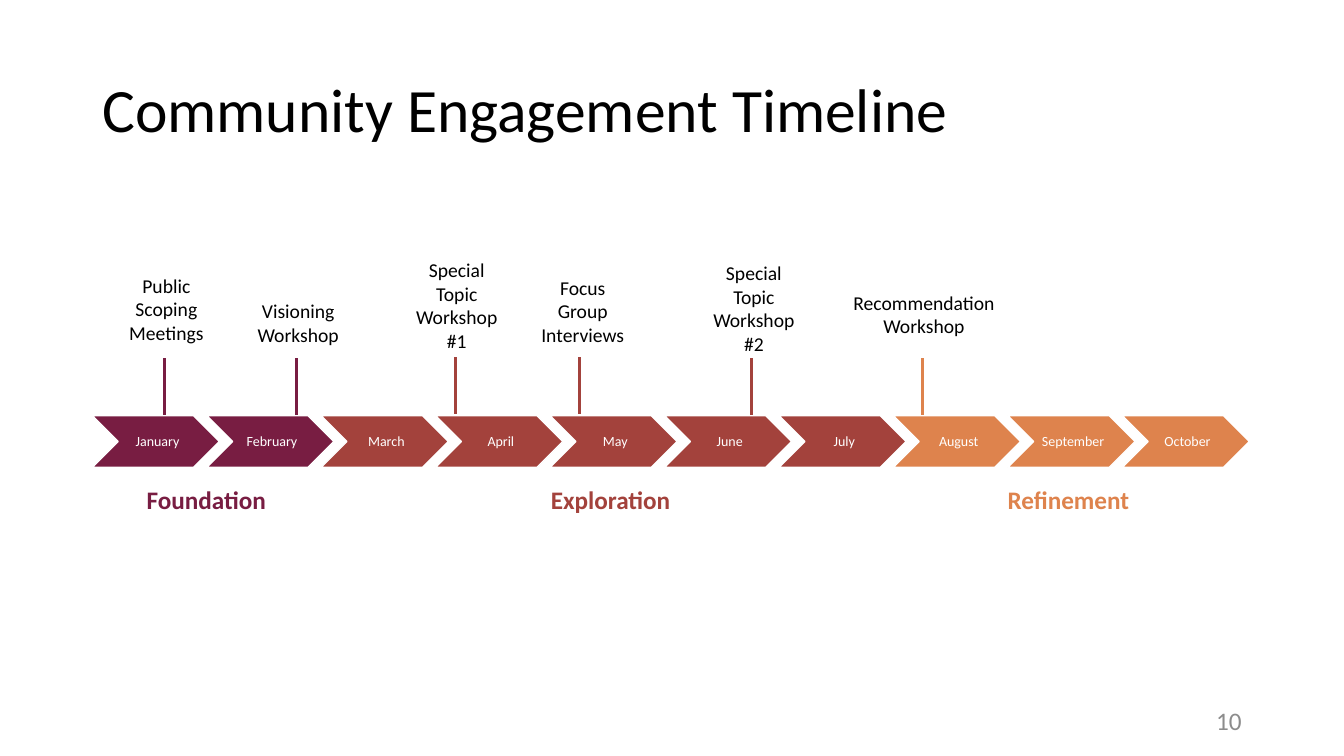
from lxml.etree import SubElement
from pptx import Presentation
from pptx.dml.color import RGBColor
from pptx.enum.shapes import MSO_CONNECTOR, MSO_SHAPE
from pptx.enum.text import MSO_ANCHOR, MSO_AUTO_SIZE, PP_ALIGN
from pptx.oxml.ns import qn
from pptx.util import Pt

PX = 9525
FONT = "Calibri"
BLACK, WHITE, GREY = "000000", "FFFFFF", "8C8C8C"
PLUM, BRICK, ORANGE = "781D42", "A3423C", "DE834D"

# name, colour, months, left edge of the name
PHASES = [
    ("Foundation", PLUM, ["January", "February"], 95),
    ("Exploration", BRICK, ["March", "April", "May", "June", "July"], 480),
    ("Refinement", ORANGE, ["August", "September", "October"], 916),
]
# wording, colour, stem x, stem top, label box
EVENTS = [
    ("Public Scoping Meetings", PLUM, 157, 341, (108, 256, 101, 78)),
    ("Visioning Workshop", PLUM, 282, 341, (231, 280, 106, 55)),
    ("Special Topic Workshop #1", BRICK, 434, 340, (382, 241, 106, 100)),
    ("Focus Group Interviews", BRICK, 552, 340, (502, 258, 106, 78)),
    ("Special Topic Workshop #2", BRICK, 716, 341, (665, 244, 106, 100)),
    ("Recommendation Workshop", ORANGE, 879, 341, (796, 272, 168, 55)),
]
STEM_HEIGHT = 54
MONTH_LEFT, MONTH_TOP, MONTH_PITCH = 88, 396, 109
MONTH_WIDTH, MONTH_HEIGHT = 121, 49
PHASE_TOP, PHASE_WIDTH, PHASE_HEIGHT = 457, 203, 38


def px(*lengths):
    return [length * PX for length in lengths]


def colour(code):
    return RGBColor.from_string(code)


def set_all(target, values):
    for name, value in values.items():
        setattr(target, name, value)


def write(frame, wording, size, code, bold=False, frame_format=None, **paragraph_format):
    set_all(frame, {"word_wrap": True, **(frame_format or {})})
    paragraph = frame.paragraphs[0]
    set_all(paragraph, paragraph_format)
    run = paragraph.add_run()
    run.text = wording
    set_all(run.font, {"name": FONT, "size": Pt(size), "bold": bold})
    run.font.color.rgb = colour(code)


def add_label(slide, box, *wording, **options):
    write(slide.shapes.add_textbox(*px(*box)).text_frame, *wording, **options)


def add_centred_label(slide, box, *wording, **options):
    add_label(slide, box, *wording, alignment=PP_ALIGN.CENTER,
              frame_format={"auto_size": MSO_AUTO_SIZE.SHAPE_TO_FIT_TEXT}, **options)


def add_month(slide, position, month, code):
    left = MONTH_LEFT + position * MONTH_PITCH
    chevron = slide.shapes.add_shape(
        MSO_SHAPE.CHEVRON, *px(left, MONTH_TOP, MONTH_WIDTH, MONTH_HEIGHT))
    chevron.shadow.inherit = False
    chevron.fill.solid()
    chevron.fill.fore_color.rgb = colour(code)
    chevron.line.color.rgb = colour(WHITE)
    chevron.line.width = Pt(1)
    insets = dict(zip(("margin_left", "margin_top", "margin_right", "margin_bottom"),
                      px(4, 1, 1, 1)))
    write(chevron.text_frame, month, 10, WHITE,
          frame_format={"vertical_anchor": MSO_ANCHOR.MIDDLE, **insets},
          alignment=PP_ALIGN.CENTER, line_spacing=0.9)


def add_stem(slide, x, top, code):
    stem = slide.shapes.add_connector(
        MSO_CONNECTOR.STRAIGHT, *px(x, top + STEM_HEIGHT, x, top))
    stem.line.color.rgb = colour(code)
    stem.line.width = Pt(2.25)
    SubElement(stem._element.spPr, qn("a:effectLst"))


def main():
    deck = Presentation()
    deck.slide_width, deck.slide_height = px(1280, 720)
    slide = deck.slides.add_slide(deck.slide_layouts[6])
    middle = {"vertical_anchor": MSO_ANCHOR.MIDDLE}

    add_label(slide, (88, 38, 1104, 139), "Community Engagement Timeline", 44, BLACK,
              frame_format=middle, line_spacing=0.9)
    add_label(slide, (904, 667, 288, 38), "10", 18, GREY,
              frame_format=middle, alignment=PP_ALIGN.RIGHT)

    months = [(month, code) for _, code, names, _ in PHASES for month in names]
    for position, (month, code) in enumerate(months):
        add_month(slide, position, month, code)
    for wording, code, x, top, box in EVENTS:
        add_stem(slide, x, top, code)
        add_centred_label(slide, box, wording, 14, BLACK)
    for phase, code, _, left in PHASES:
        add_centred_label(slide, (left, PHASE_TOP, PHASE_WIDTH, PHASE_HEIGHT),
                          phase, 18, code, bold=True)

    deck.save("out.pptx")


if __name__ == "__main__":
    main()
